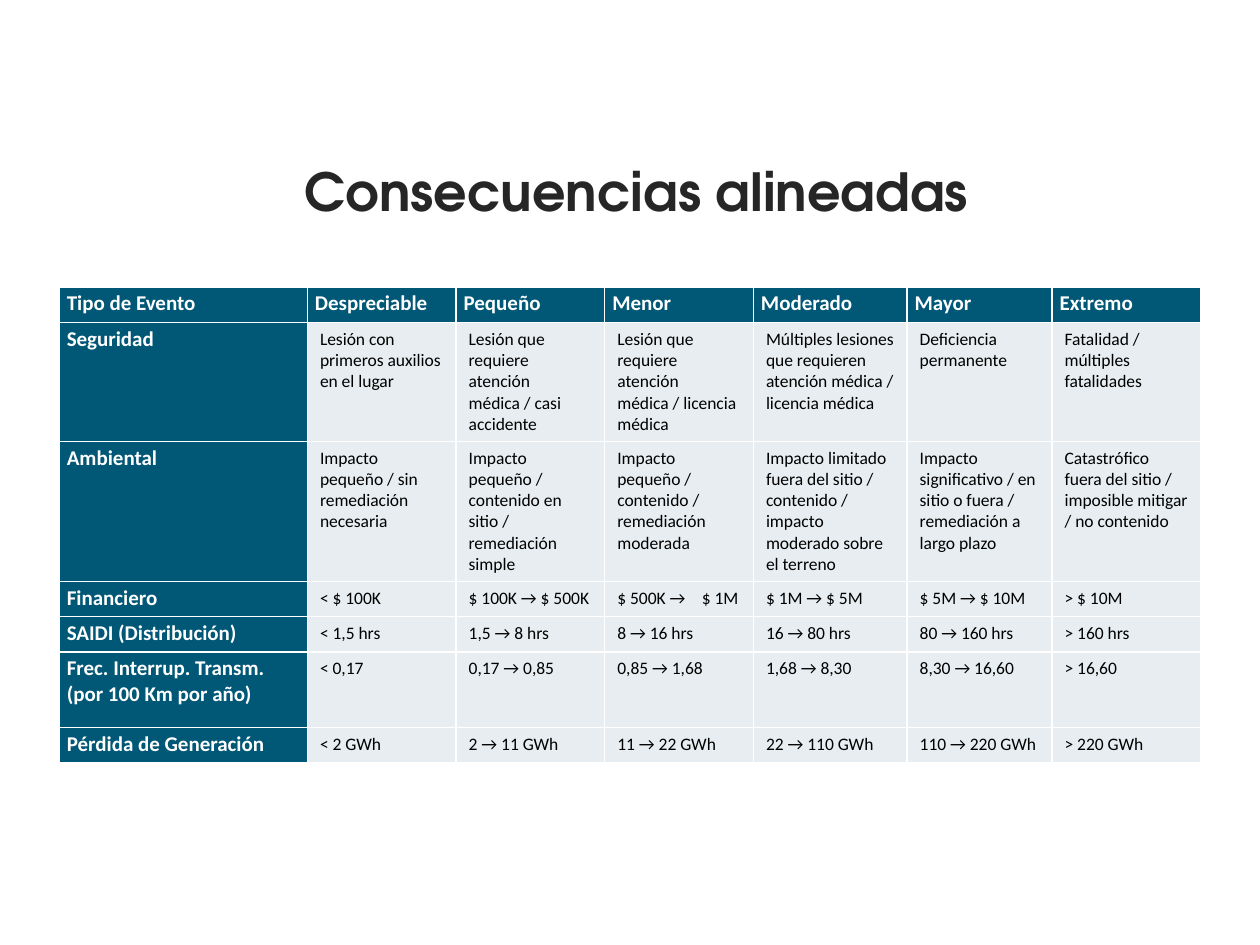
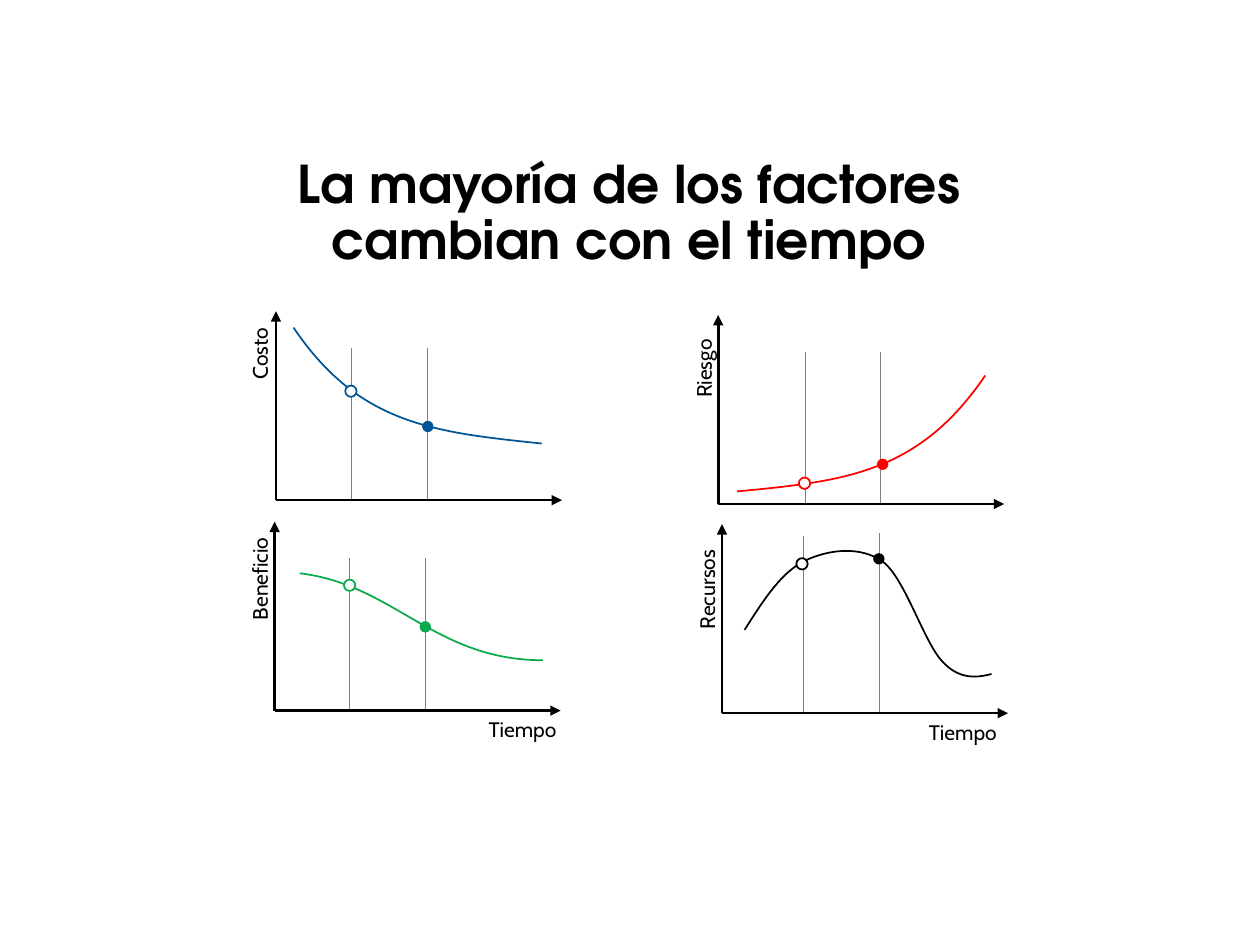
from dataclasses import dataclass

from lxml import etree
from pptx import Presentation
from pptx import util as u
from pptx.dml.color import RGBColor
from pptx.enum import shapes, text
from pptx.oxml import ns

PX = 9144


@dataclass(frozen=True)
class Theme:
    ink: str = "000000"
    soft_ink: str = "262626"
    paper: str = "FFFFFF"
    header: str = "005776"
    cell: str = "E7EDF0"
    guide: str = "7F7F7F"
    cost: str = "005596"
    risk: str = "FF0000"
    benefit: str = "0BA94D"
    title_font: str = "TeX Gyre Adventor"
    table_font: str = "Calibri"
    label_font: str = "Cabin"
    title_size: float = 30
    long_title_size: float = 29.7
    header_size: float = 12
    cell_size: float = 10
    label_size: float = 12
    axis_width: float = 1.5
    curve_width: float = 1
    guide_width: float = 0.5


THEME = Theme()


def px(*lengths):
    return [u.Emu(round(length * PX)) for length in lengths]


def rgb(colour):
    return RGBColor.from_string(colour)


def bezier(start, first, second, end, steps=24):
    for step in range(1, steps + 1):
        t = step / steps
        weights = ((1 - t) ** 3, 3 * t * (1 - t) ** 2, 3 * t * t * (1 - t), t ** 3)
        yield tuple(
            sum(weight * point[axis] for weight, point in zip(weights, (start, first, second, end)))
            for axis in (0, 1)
        )


class SlideBuilder:
    def __init__(self, deck, theme):
        self.deck = deck
        self.theme = theme
        self.page = None

    def new_page(self, title, area, size, colour):
        self.page = self.deck.slides.add_slide(self.deck.slide_layouts[5])
        box = self.page.shapes.title
        box.left, box.top, box.width, box.height = px(*area)
        frame = box.text_frame
        frame.text = title
        frame.word_wrap = True
        frame.auto_size = text.MSO_AUTO_SIZE.NONE
        frame.vertical_anchor = text.MSO_ANCHOR.MIDDLE
        para = frame.paragraphs[0]
        para.alignment = text.PP_ALIGN.CENTER
        para.line_spacing = 0.9
        self.style_runs(para, self.theme.title_font, size, colour, True)

    def style_runs(self, para, font, size, colour, bold=False):
        for span in para.runs:
            span.font.name = font
            span.font.size = u.Pt(size)
            span.font.bold = bold
            span.font.color.rgb = rgb(colour)

    def label(self, words, left, top, width, rotation=0, align=text.PP_ALIGN.LEFT):
        box = self.page.shapes.add_textbox(*px(left, top, width, 30))
        box.rotation = rotation
        frame = box.text_frame
        frame.text = words
        frame.word_wrap = True
        frame.auto_size = text.MSO_AUTO_SIZE.SHAPE_TO_FIT_TEXT
        para = frame.paragraphs[0]
        para.alignment = align
        self.style_runs(para, self.theme.label_font, self.theme.label_size, self.theme.ink)

    def line(self, start, end, colour, width, arrow=False):
        connector = self.page.shapes.add_connector(
            shapes.MSO_CONNECTOR.STRAIGHT, *px(*start, *end))
        connector.line.color.rgb = rgb(colour)
        connector.line.width = u.Pt(width)
        properties = connector.element.spPr
        if arrow:
            outline = properties.find(ns.qn("a:ln"))
            etree.SubElement(outline, ns.qn("a:tailEnd"), type="triangle")
        etree.SubElement(properties, ns.qn("a:effectLst"))

    def curve(self, points, colour):
        segments = [points[index:index + 4] for index in range(0, len(points) - 1, 3)]
        outline = [px(*point) for segment in segments for point in bezier(*segment)]
        builder = self.page.shapes.build_freeform(*px(*points[0]))
        builder.add_line_segments(outline, close=False)
        shape = builder.convert_to_shape()
        self.smooth_outline(shape, segments)
        shape.shadow.inherit = False
        shape.fill.background()
        shape.line.color.rgb = rgb(colour)
        shape.line.width = u.Pt(self.theme.curve_width)

    def smooth_outline(self, shape, segments):
        trace = shape.element.spPr.find(".//" + ns.qn("a:path"))
        for command in list(trace):
            trace.remove(command)
        commands = [("a:moveTo", segments[0][:1])]
        commands += [("a:cubicBezTo", segment[1:]) for segment in segments]
        for tag, points in commands:
            command = etree.SubElement(trace, ns.qn(tag))
            for point in points:
                x, y = px(*point)
                etree.SubElement(command, ns.qn("a:pt"),
                                 x=str(x - shape.left), y=str(y - shape.top))

    def dot(self, left, top, colour, hollow):
        shape = self.page.shapes.add_shape(shapes.MSO_SHAPE.OVAL, *px(left, top, 9, 9))
        shape.shadow.inherit = False
        shape.fill.solid()
        shape.fill.fore_color.rgb = rgb(self.theme.paper if hollow else colour)
        if hollow:
            shape.line.color.rgb = rgb(colour)
            shape.line.width = u.Pt(self.theme.curve_width)
        else:
            shape.line.fill.background()

    def cell_borders(self, cell):
        properties = cell._tc.get_or_add_tcPr()
        for side in ("lnL", "lnR", "lnT", "lnB"):
            border = etree.SubElement(properties, ns.qn(f"a:{side}"), w=str(u.Pt(1)))
            fill = etree.SubElement(border, ns.qn("a:solidFill"))
            etree.SubElement(fill, ns.qn("a:srgbClr"), val=self.theme.paper)

    def tab_stop(self, para, position):
        stops = etree.SubElement(para._p.get_or_add_pPr(), ns.qn("a:tabLst"))
        etree.SubElement(stops, ns.qn("a:tab"), pos=str(px(position)[0]), algn="l")

    def table(self, rows, left, top, widths, heights):
        theme = self.theme
        table = self.page.shapes.add_table(
            len(rows), len(widths), *px(left, top, sum(widths), sum(heights))).table
        for column, width in zip(table.columns, px(*widths)):
            column.width = width
        for row, height in zip(table.rows, px(*heights)):
            row.height = height
        for row_index, row in enumerate(rows):
            for column_index, words in enumerate(row):
                heading = row_index == 0 or column_index == 0
                cell = table.cell(row_index, column_index)
                self.cell_borders(cell)
                cell.fill.solid()
                cell.fill.fore_color.rgb = rgb(theme.header if heading else theme.cell)
                cell.text_frame.text = words
                para = cell.text_frame.paragraphs[0]
                if "\t" in words:
                    self.tab_stop(para, 67)
                if heading:
                    cell.margin_left, cell.margin_right = px(6, 6)
                    cell.margin_top, cell.margin_bottom = px(3, 3)
                self.style_runs(
                    para, theme.table_font,
                    theme.header_size if heading else theme.cell_size,
                    theme.paper if heading else theme.ink, heading)

    def factor_chart(self, factor):
        theme = self.theme
        x, y = factor.origin
        self.curve(factor.curve, factor.colour)
        self.label(factor.name, *factor.label_area, rotation=270)
        for index, (guide_x, guide_top, dot_left, dot_top) in enumerate(factor.marks):
            self.line((guide_x, y - 1), (guide_x, guide_top), theme.guide, theme.guide_width)
            self.dot(dot_left, dot_top, factor.colour, hollow=index == 0)
        for end in ((x, y - 150), (x + 227, y)):
            self.line((x, y), end, theme.ink, theme.axis_width, arrow=True)


@dataclass(frozen=True)
class Factor:
    name: str
    colour: str
    origin: tuple
    label_area: tuple
    curve: tuple
    marks: tuple


CONSEQUENCES = (
    ("Tipo de Evento", "Despreciable", "Pequeño", "Menor", "Moderado", "Mayor", "Extremo"),
    ("Seguridad",
     "Lesión con primeros auxilios en el lugar",
     "Lesión que requiere atención médica / casi accidente",
     "Lesión que requiere atención médica / licencia médica",
     "Múltiples lesiones que requieren atención médica / licencia médica",
     "Deficiencia permanente",
     "Fatalidad / múltiples fatalidades"),
    ("Ambiental",
     "Impacto pequeño / sin remediación necesaria",
     "Impacto pequeño / contenido en sitio / remediación simple",
     "Impacto pequeño / contenido / remediación moderada",
     "Impacto limitado fuera del sitio / contenido / impacto moderado sobre el terreno",
     "Impacto significativo / en sitio o fuera / remediación a largo plazo",
     "Catastrófico fuera del sitio / imposible mitigar / no contenido"),
    ("Financiero", "< $ 100K", "$ 100K → $ 500K", "$ 500K →\t$ 1M",
     "$ 1M → $ 5M", "$ 5M → $ 10M", "> $ 10M"),
    ("SAIDI (Distribución)", "< 1,5 hrs", "1,5 → 8 hrs", "8 → 16 hrs",
     "16 → 80 hrs", "80 → 160 hrs", "> 160 hrs"),
    ("Frec. Interrup. Transm. (por 100 Km por año)", "< 0,17", "0,17 → 0,85", "0,85 → 1,68",
     "1,68 → 8,30", "8,30 → 16,60", "> 16,60"),
    ("Pérdida de Generación", "< 2 GWh", "2 → 11 GWh", "11 → 22 GWh",
     "22 → 110 GWh", "110 → 220 GWh", "> 220 GWh"),
)

FACTORS = (
    Factor("Costo", THEME.cost, (219, 397), (171, 261, 70),
           ((233, 260), (285, 337), (344, 343), (430, 352)),
           ((279, 276, 274, 306), (339, 276, 335, 334))),
    Factor("Riesgo", THEME.risk, (570, 400), (519, 271, 79),
           ((782, 298), (729, 376), (670, 382), (585, 390)),
           ((639, 279, 634, 379), (699, 279, 696, 364))),
    Factor("Beneficio", THEME.benefit, (218, 564), (159, 440, 94),
           ((238, 455), (313, 464), (345, 524), (431, 524)),
           ((277, 443, 273, 460), (338, 443, 333, 493))),
    Factor("Recursos", THEME.ink, (573, 566), (514, 447, 94),
           ((591, 500), (608, 473), (621, 454), (639, 445),
            (658, 436), (683, 433), (701, 446),
            (719, 460), (734, 512), (749, 526),
            (763, 541), (779, 537), (787, 535)),
           ((638, 425, 632, 443), (698, 423, 693, 439))),
)


def main():
    deck = Presentation()
    deck.slide_width, deck.slide_height = px(1000, 750)
    builder = SlideBuilder(deck, THEME)

    builder.new_page("Consecuencias alineadas", (132, 115, 746, 79),
                     THEME.title_size, THEME.soft_ink)
    builder.table(CONSEQUENCES, 47, 228,
                  (197, 118, 118, 118, 122, 115, 118), (28, 66, 85, 28, 28, 60, 28))

    builder.new_page("La mayoría de los factores cambian con el tiempo", (207, 131, 585, 79),
                     THEME.long_title_size, THEME.ink)
    for factor in FACTORS:
        builder.factor_chart(factor)
    builder.label("Tiempo", 378, 564, 78)
    builder.label("Tiempo", 571, 566, 230, align=text.PP_ALIGN.RIGHT)

    deck.save("out.pptx")


if __name__ == "__main__":
    main()
